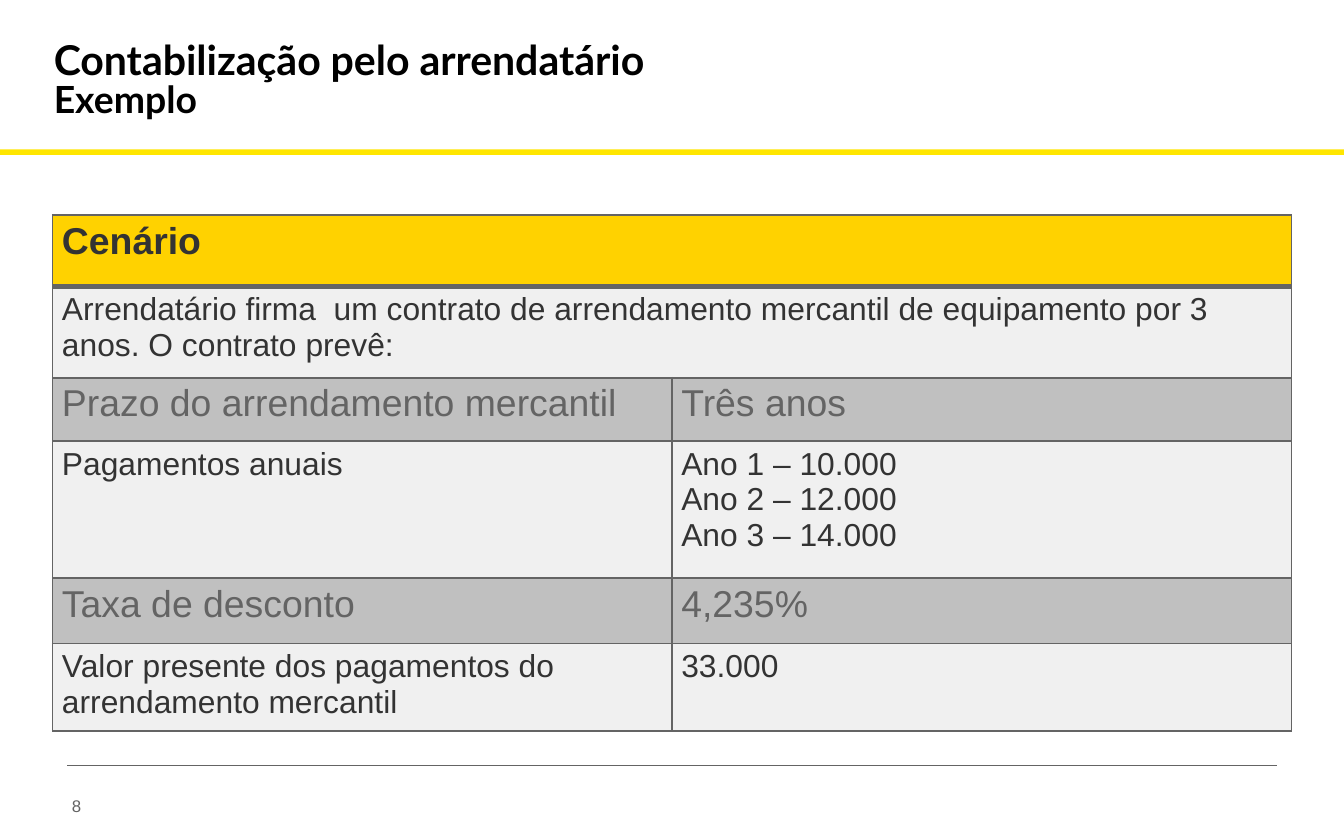
from lxml.etree import SubElement
from pptx import Presentation
from pptx.dml.color import RGBColor
from pptx.enum.shapes import MSO_CONNECTOR as Connector, MSO_SHAPE as Shape
from pptx.enum.text import MSO_ANCHOR as Anchor
from pptx.oxml.ns import qn
from pptx.util import Pt

THEME = {
    "font": "Arial", "title_font": "Lato",
    "title": "000000", "text": "333333", "muted": "646464",
    "bar": "FFE600", "header": "FFD200", "light": "F0F0F0", "dark": "C0C0C0",
    "title_size": 22, "large": 20, "body": 17, "small": 9,
}
WIDTH, HEIGHT = 720, 450
TITLE = ["Contabilização pelo arrendatário", "Exemplo"]
PAGE_NUMBER = "8"

# Row style, height, cell texts (one text spans the whole row)
ROWS = [
    ("header", 38.2, ["Cenário"]),
    ("light", 49, ["Arrendatário firma  um contrato de arrendamento mercantil "
                   "de equipamento por 3 anos. O contrato prevê:"]),
    ("dark", 33.8, ["Prazo do arrendamento mercantil", "Três anos"]),
    ("light", 73.4, ["Pagamentos anuais",
                     "Ano 1 – 10.000\nAno 2 – 12.000\nAno 3 – 14.000"]),
    ("dark", 35.3, ["Taxa de desconto", "4,235%"]),
    ("light", 46.1, ["Valor presente dos pagamentos do arrendamento mercantil",
                     "33.000"]),
]
ROW_FORMATS = {
    "header": {"size": "large", "color": "text", "bold": True},
    "light": {"size": "body", "color": "text"},
    "dark": {"size": "large", "color": "muted"},
}
TABLE_LEFT, TABLE_TOP, COLUMN_WIDTH, COLUMN_COUNT = 28.2, 115.2, 331.8, 2


def theme_color(name):
    return RGBColor.from_string(THEME[name])


def write_run(paragraph, text, size="body", color="text", font="font", bold=False):
    run = paragraph.add_run()
    run.text = text
    run.font.name = THEME[font]
    run.font.size = Pt(THEME[size])
    run.font.bold = bold
    run.font.color.rgb = theme_color(color)


def add_text_box(slide, left, top, width, height):
    """Add an empty box without margins and return its first paragraph."""
    frame = slide.shapes.add_textbox(Pt(left), Pt(top), Pt(width), Pt(height)).text_frame
    frame.margin_left = frame.margin_right = frame.margin_top = frame.margin_bottom = 0
    frame.word_wrap = True
    frame.vertical_anchor = Anchor.TOP
    return frame.paragraphs[0]


def add_title(slide):
    paragraph = add_text_box(slide, 28.8, 22.3, 486, 56.2)
    paragraph.line_spacing = 0.85
    heading, subheading = TITLE
    title_format = {"color": "title", "font": "title_font", "bold": True}
    write_run(paragraph, heading, size="title_size", **title_format)
    paragraph.add_line_break()
    write_run(paragraph, subheading, size="large", **title_format)


def add_bar(slide):
    bar = slide.shapes.add_shape(Shape.RECTANGLE, 0, Pt(80), Pt(WIDTH), Pt(3))
    bar.shadow.inherit = False
    bar.fill.solid()
    bar.fill.fore_color.rgb = theme_color("bar")
    bar.line.fill.background()


def set_borders(cell, top, bottom):
    """Draw the four cell borders; top and bottom are widths in points."""
    properties = cell._tc.get_or_add_tcPr()
    for side, width in (("L", 1), ("R", 1), ("T", top), ("B", bottom)):
        border = SubElement(properties, qn(f"a:ln{side}"), w=str(Pt(width)))
        fill = SubElement(border, qn("a:solidFill"))
        SubElement(fill, qn("a:srgbClr"), val=THEME["muted"])


def add_scenario_table(slide):
    table = slide.shapes.add_table(
        len(ROWS), COLUMN_COUNT, Pt(TABLE_LEFT), Pt(TABLE_TOP),
        Pt(COLUMN_WIDTH * COLUMN_COUNT), Pt(sum(height for _, height, _ in ROWS)),
    ).table
    for column in table.columns:
        column.width = Pt(COLUMN_WIDTH)
    for row_index, (style, height, texts) in enumerate(ROWS):
        table.rows[row_index].height = Pt(height)
        cells = [table.cell(row_index, column) for column in range(COLUMN_COUNT)]
        if len(texts) == 1:
            cells[0].merge(cells[-1])
        for cell in cells:
            set_borders(cell, top=3 if row_index == 1 else 1,
                        bottom=3 if row_index == 0 else 1)
            cell.fill.solid()
            cell.fill.fore_color.rgb = theme_color(style)
            cell.margin_left = cell.margin_right = Pt(5)
            cell.margin_top = cell.margin_bottom = Pt(2.9)
            cell.vertical_anchor = Anchor.TOP
        for cell, text in zip(cells, texts):
            frame = cell.text_frame
            for line_index, line in enumerate(text.split("\n")):
                paragraph = frame.add_paragraph() if line_index else frame.paragraphs[0]
                write_run(paragraph, line, **ROW_FORMATS[style])


def add_footer(slide):
    rule = slide.shapes.add_connector(
        Connector.STRAIGHT, Pt(36), Pt(409.7), Pt(WIDTH - 36), Pt(409.7))
    rule.line.color.rgb = theme_color("muted")
    rule.line.width = Pt(0.25)
    SubElement(rule._element.spPr, qn("a:effectLst"))
    paragraph = add_text_box(slide, 38.5, 426.2, 54.4, 13)
    write_run(paragraph, PAGE_NUMBER, size="small", color="muted")


def main():
    presentation = Presentation()
    presentation.slide_width, presentation.slide_height = Pt(WIDTH), Pt(HEIGHT)
    slide = presentation.slides.add_slide(presentation.slide_layouts[6])
    add_footer(slide)
    add_title(slide)
    add_scenario_table(slide)
    add_bar(slide)
    presentation.save("out.pptx")


if __name__ == "__main__":
    main()
